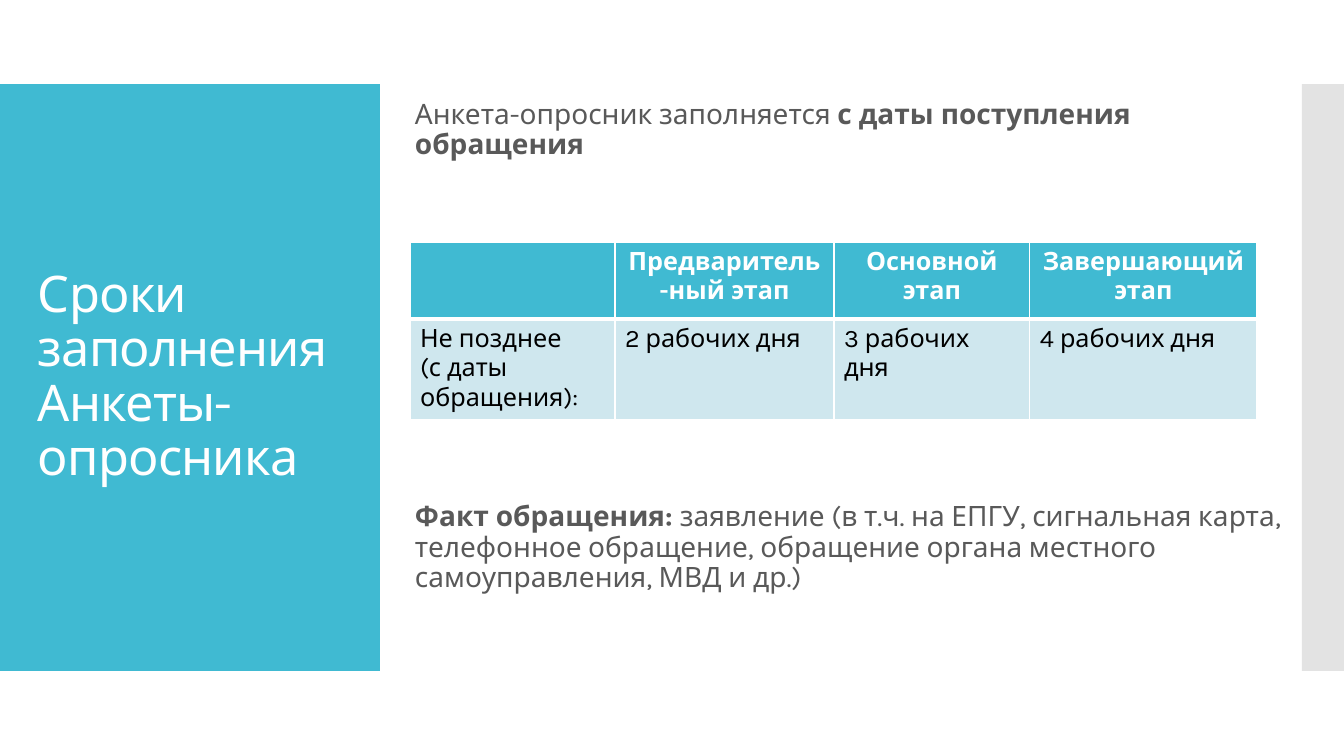
from lxml import etree
from pptx import Presentation
from pptx import util as u
from pptx.dml.color import RGBColor
from pptx.enum import shapes, text
from pptx.oxml.ns import qn

PX = 914400 / 100.8
FONT = "Karla"
COLORS = {"accent": "40BAD2", "side": "C8C8C8", "row": "CFE7EE",
          "white": "FFFFFF", "body": "595959", "black": "000000"}
COLUMNS = [205, 219, 196, 227]
ROWS = [77, 98]
TABLE = [
    ["", "Предваритель-ный этап", "Основной этап", "Завершающий этап"],
    ["Не позднее\n(с даты обращения):", "2 рабочих дня", "3 рабочих дня", "4 рабочих дня"],
]


def px(n):
    """Turn whole px into EMU."""
    return u.Emu(round(n * PX))


def rgb(name):
    """Look up a named colour."""
    return RGBColor.from_string(COLORS[name])


def add_run(p, words, size=20, color="body", bold=False, spc=None):
    """Append formatted text to a paragraph."""
    r = p.add_run()
    r.text = words
    r.font.name, r.font.size, r.font.bold = FONT, u.Pt(size), bold
    r.font.color.rgb = rgb(color)
    if spc is not None:
        r.font._element.set("spc", str(spc))


def add_panel(slide, box, color, alpha=None):
    """Draw a plain rectangle, optionally see-through."""
    sp = slide.shapes.add_shape(shapes.MSO_SHAPE.RECTANGLE, *map(px, box))
    sp.shadow.inherit = False
    sp.fill.solid()
    sp.fill.fore_color.rgb = rgb(color)
    sp.line.fill.background()
    if alpha is not None:
        clr = sp._element.spPr.find(".//" + qn("a:srgbClr"))
        etree.SubElement(clr, qn("a:alpha")).set("val", str(alpha * 1000))


def add_textbox(slide, box, anchor):
    """Add a wrapping text box and return its frame."""
    tf = slide.shapes.add_textbox(*map(px, box)).text_frame
    tf.word_wrap = True
    tf.vertical_anchor = anchor
    return tf


def add_body_paragraph(p, runs, before=2.5):
    """Fill a body paragraph from (words, bold) pairs."""
    p.line_spacing = 0.9
    p.space_before, p.space_after = u.Pt(before), u.Pt(2.5)
    p._p.get_or_add_pPr().set("marL", str(px(3)))
    for words, bold in runs:
        add_run(p, words, bold=bold)


def set_borders(cell, bottom):
    """Give a cell white borders with its own bottom width in points."""
    tcPr = cell._tc.get_or_add_tcPr()
    for side, width in (("L", 1), ("R", 1), ("T", 1), ("B", bottom)):
        ln = etree.SubElement(tcPr, qn("a:ln" + side), w=str(u.Pt(width)))
        fill = etree.SubElement(ln, qn("a:solidFill"))
        etree.SubElement(fill, qn("a:srgbClr"), val=COLORS["white"])


def add_deadlines(slide, left, top):
    """Add the table of deadlines by stage."""
    tbl = slide.shapes.add_table(len(ROWS), len(COLUMNS), px(left), px(top),
                                 px(sum(COLUMNS)), px(sum(ROWS))).table
    for col, width in zip(tbl.columns, COLUMNS):
        col.width = px(width)
    for i, (row, height) in enumerate(zip(tbl.rows, ROWS)):
        row.height = px(height)
        head = i == 0
        for cell, words in zip(row.cells, TABLE[i]):
            set_borders(cell, 3 if head else 1)
            cell.fill.solid()
            cell.fill.fore_color.rgb = rgb("accent" if head else "row")
            for n, line in enumerate(words.split("\n")):
                tf = cell.text_frame
                p = tf.add_paragraph() if n else tf.paragraphs[0]
                p.alignment = text.PP_ALIGN.CENTER if head else text.PP_ALIGN.LEFT
                if line:
                    add_run(p, line, 18, "white" if head else "black", head)


def main():
    """Build and save the slide."""
    prs = Presentation()
    prs.slide_width, prs.slide_height = px(1344), px(756)
    slide = prs.slides.add_slide(prs.slide_layouts[6])
    add_panel(slide, (0, 84, 380, 587), "accent")
    add_panel(slide, (1302, 84, 42, 587), "side", alpha=50)

    tf = add_textbox(slide, (28, 124, 333, 507), text.MSO_ANCHOR.MIDDLE)
    p = tf.paragraphs[0]
    p.line_spacing = 0.9
    add_run(p, "Сроки заполнения Анкеты-опросника", 36, "white", spc=-60)

    tf = add_textbox(slide, (402, 95, 892, 564), text.MSO_ANCHOR.TOP)
    add_body_paragraph(tf.paragraphs[0], [
        ("Анкета-опросник заполняется ", False),
        ("с даты поступления обращения", True)])
    add_body_paragraph(tf.add_paragraph(), [
        ("Факт обращения: ", True),
        ("заявление (в т.ч. на ЕПГУ, сигнальная карта, телефонное обращение, "
         "обращение органа местного самоуправления, МВД и др.)", False)], before=242)

    add_deadlines(slide, 410, 242)
    prs.save("out.pptx")


if __name__ == "__main__":
    main()
